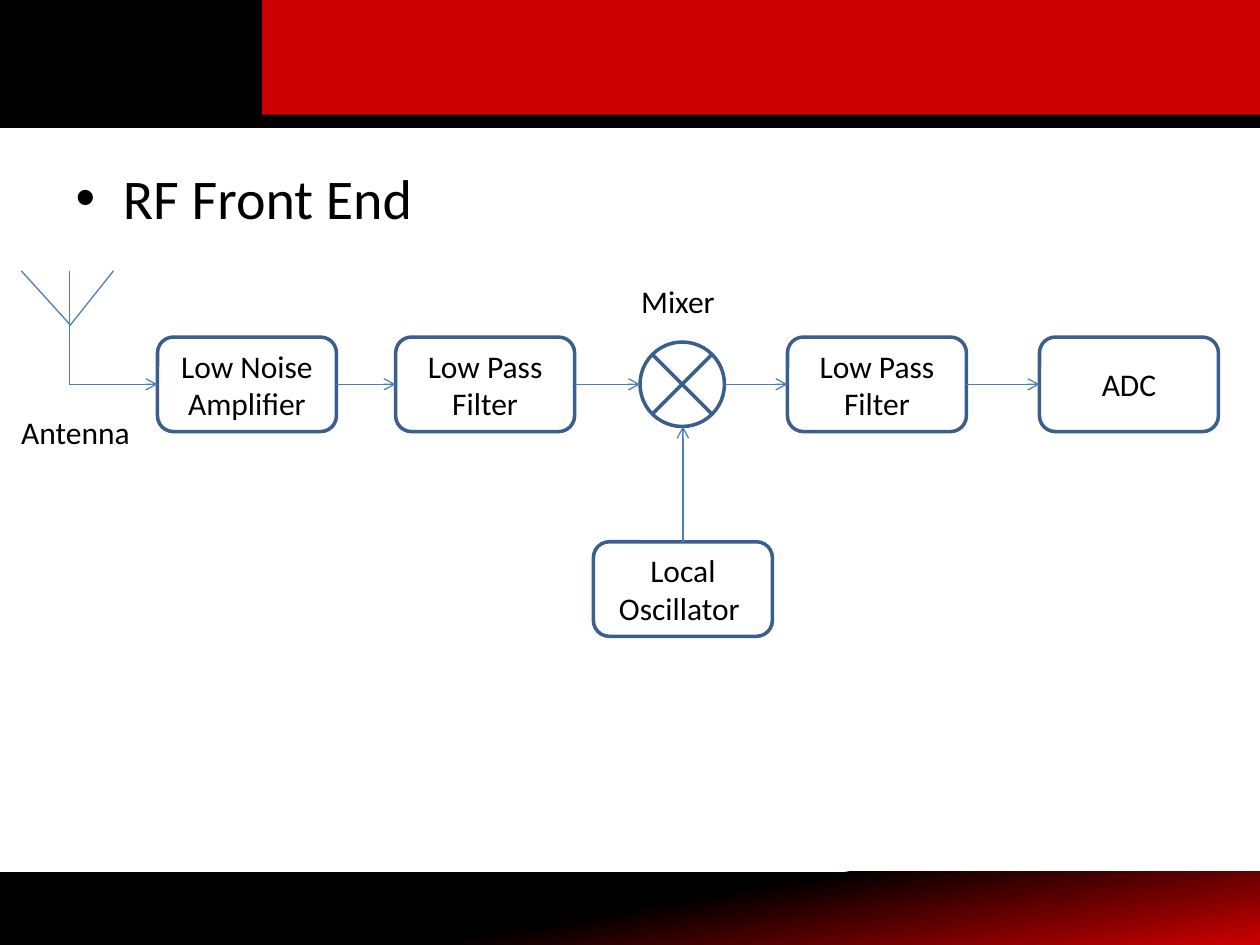
from itertools import pairwise

from lxml.etree import SubElement
from pptx import Presentation
from pptx.dml.color import RGBColor
from pptx.enum.shapes import MSO_CONNECTOR, MSO_SHAPE
from pptx.enum.text import MSO_ANCHOR, MSO_AUTO_SIZE, PP_ALIGN
from pptx.oxml.ns import qn
from pptx.util import Inches, Pt

COLORS = {"black": "000000", "red": "CC0000", "outline": "3A5F8C", "signal": "4B7EBC"}
FONT = "Calibri"
BLOCK_WIDTH, BLOCK_HEIGHT = 1.42, 0.75
MIXER_SIZE = 0.67
CHAIN_Y = 3.05
MIXER_LEFT = 5.08
MIXER_X = 5.42
OSCILLATOR_TOP = 4.3
MAST_X, ANTENNA_TOP = 0.55, 2.15


def color(name):
    return RGBColor.from_string(COLORS[name])


def format_text(frame, size):
    for paragraph in frame.paragraphs:
        for run in paragraph.runs:
            run.font.name = FONT
            run.font.size = Pt(size)
            run.font.color.rgb = color("black")


def add_preset(slide, preset, left, top, width, height, fill=None, outline=None):
    shape = slide.shapes.add_shape(
        preset, Inches(left), Inches(top), Inches(width), Inches(height))
    shape.shadow.inherit = False
    if fill:
        shape.fill.solid()
        shape.fill.fore_color.rgb = color(fill)
    else:
        shape.fill.background()
    if outline:
        shape.line.color.rgb = color(outline)
        shape.line.width = Pt(2)
    else:
        shape.line.fill.background()
    return shape


def add_bands(slide):
    """Draw the header blocks and the shaded footer."""
    footer = add_preset(slide, MSO_SHAPE.RECTANGLE, 0, 6.92, 10, 0.58)
    footer.fill.gradient()
    footer.fill.gradient_angle = 280
    stops = zip(footer.fill.gradient_stops, ("black", "red"), (0.5, 1))
    for stop, name, position in stops:
        stop.color.rgb = color(name)
        stop.position = position
    add_preset(slide, MSO_SHAPE.RECTANGLE, 0, 0, 10, 1, "black", "black")
    add_preset(slide, MSO_SHAPE.RECTANGLE, 2.08, -0.01, 7.92, 0.92, "red")


def add_block(slide, label, left, top):
    block = add_preset(slide, MSO_SHAPE.ROUNDED_RECTANGLE, left, top,
                       BLOCK_WIDTH, BLOCK_HEIGHT, outline="outline")
    frame = block.text_frame
    frame.text = label
    frame.vertical_anchor = MSO_ANCHOR.MIDDLE
    frame.paragraphs[0].alignment = PP_ALIGN.CENTER
    format_text(frame, 18)


def add_line(slide, start, end, arrow=False):
    line = slide.shapes.add_connector(
        MSO_CONNECTOR.STRAIGHT, *(Inches(value) for value in (*start, *end)))
    line.line.color.rgb = color("signal")
    line.line.width = Pt(0.75)
    if arrow:
        SubElement(line.line._get_or_add_ln(), qn("a:tailEnd"), type="arrow")
    SubElement(line._element.spPr, qn("a:effectLst"))


def add_label(slide, text, left, top, width):
    label = slide.shapes.add_textbox(
        Inches(left), Inches(top), Inches(width), Inches(0.4))
    frame = label.text_frame
    frame.word_wrap = False
    frame.auto_size = MSO_AUTO_SIZE.SHAPE_TO_FIT_TEXT
    frame.text = text
    format_text(frame, 18)


def add_antenna(slide):
    add_line(slide, (MAST_X, ANTENNA_TOP), (MAST_X, CHAIN_Y))
    add_line(slide, (MAST_X, 2.59), (0.9, ANTENNA_TOP))
    add_line(slide, (0.17, ANTENNA_TOP), (MAST_X, 2.57))
    add_label(slide, "Antenna", 0.07, 3.23, 1.14)


def add_signal_chain(slide):
    """Place the stages along one line and join neighbours with arrows."""
    stages = [
        ("Low Noise Amplifier", 1.25),
        ("Low Pass Filter", 3.14),
        ("Mixer", MIXER_LEFT),
        ("Low Pass Filter", 6.25),
        ("ADC", 8.25),
    ]
    spans = [(MAST_X, MAST_X)]
    for label, left in stages:
        if label == "Mixer":
            add_preset(slide, MSO_SHAPE.FLOWCHART_SUMMING_JUNCTION, left,
                       CHAIN_Y - MIXER_SIZE / 2, MIXER_SIZE, MIXER_SIZE,
                       outline="outline")
            add_label(slide, label, 4.99, 2.19, 0.86)
            spans.append((left, left + MIXER_SIZE))
        else:
            add_block(slide, label, left, CHAIN_Y - BLOCK_HEIGHT / 2)
            spans.append((left, left + BLOCK_WIDTH))
    for (_, start), (end, _) in pairwise(spans):
        add_line(slide, (start, CHAIN_Y), (end, CHAIN_Y), arrow=True)


def add_oscillator(slide):
    add_block(slide, "Local Oscillator ", MIXER_X - BLOCK_WIDTH / 2, OSCILLATOR_TOP)
    add_line(slide, (MIXER_X, OSCILLATOR_TOP),
             (MIXER_X, CHAIN_Y + MIXER_SIZE / 2), arrow=True)


def fill_body(slide):
    body = slide.placeholders[1]
    body.left, body.top = Inches(0.5), Inches(1.25)
    body.width, body.height = Inches(9), Inches(5.45)
    body.text_frame.text = "RF Front End"
    body.text_frame.paragraphs[0].space_before = Pt(0)
    format_text(body.text_frame, 32)


def main():
    presentation = Presentation()
    presentation.slide_width = Inches(10)
    presentation.slide_height = Inches(7.5)
    slide = presentation.slides.add_slide(presentation.slide_layouts[1])
    empty_title = slide.shapes.title._element
    empty_title.getparent().remove(empty_title)
    add_bands(slide)
    fill_body(slide)
    add_signal_chain(slide)
    add_oscillator(slide)
    add_antenna(slide)
    presentation.save("out.pptx")


if __name__ == "__main__":
    main()
